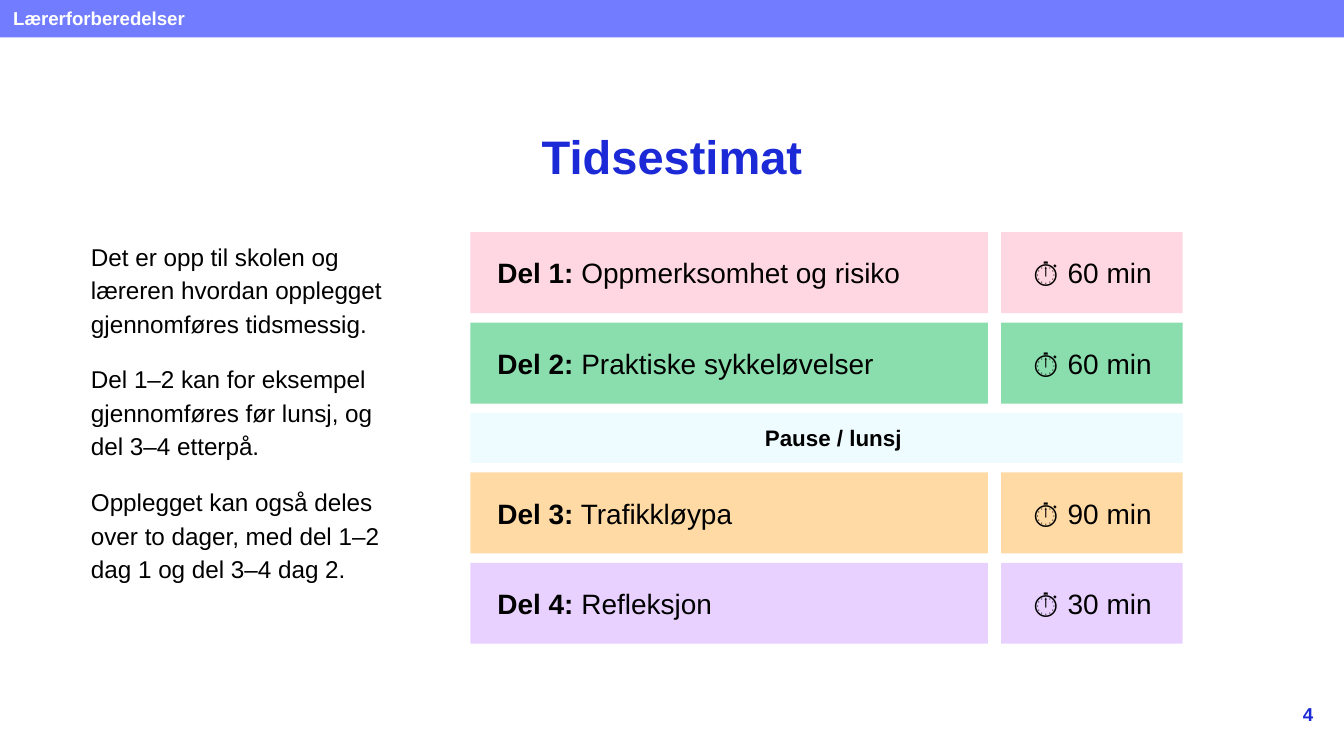
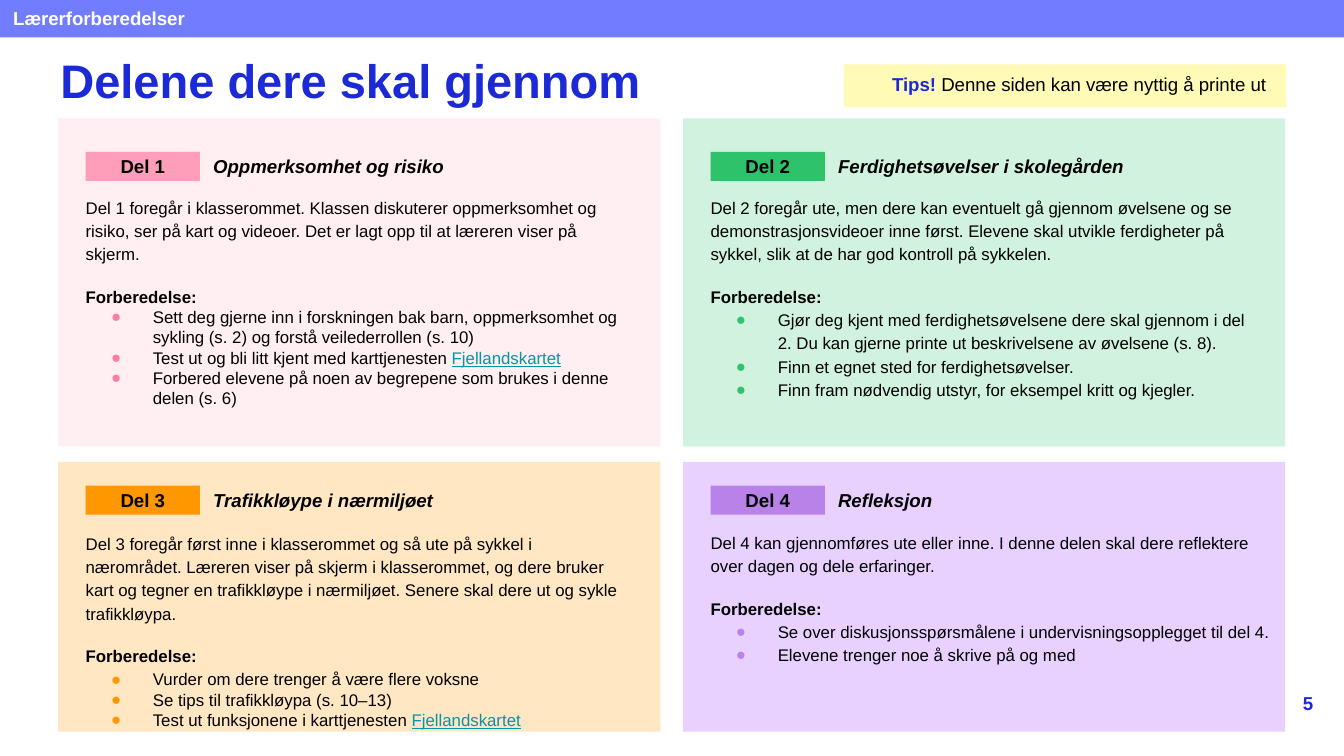
from dataclasses import dataclass, replace
from typing import Optional

from lxml import etree
from pptx import Presentation
from pptx import slide as sl
from pptx import util as u
from pptx.dml import color as dml
from pptx.enum import shapes, text
from pptx.oxml import ns

FONT = "Arial"
COL = {
    "black": "000000", "white": "FFFFFF", "blue": "1C29D6", "band": "727CFE",
    "link": "0097A7", "tip": "FFFAB5", "pause": "EEFBFF",
    "pink": "FFD7E2", "green": "8ADEAD", "peach": "FFDAA5", "lilac": "E9D1FF",
    "pink pale": "FFEEF2", "green pale": "D0F2DE", "peach pale": "FFE7C4",
    "pink tag": "FF9EBA", "green tag": "2EC26B", "orange": "FF9700", "violet": "B882E9",
    "pink dot": "FF7CA2", "green dot": "2EC36C",
}
LEFT, MID, RIGHT = text.PP_ALIGN.LEFT, text.PP_ALIGN.CENTER, text.PP_ALIGN.RIGHT
TOP, CENTRE = text.MSO_ANCHOR.TOP, text.MSO_ANCHOR.MIDDLE
PAD = 0.25
LOOSE = 1.15
WIDE, HIGH = 25.4, 14.29


@dataclass(frozen=True)
class Box:
    left: float
    top: float
    width: float
    height: float

    def dims(self) -> list[u.Length]:
        return [u.Cm(v) for v in (self.left, self.top, self.width, self.height)]


@dataclass(frozen=True)
class Run:
    words: str
    bold: bool = False
    italic: bool = False
    under: bool = False
    ink: str = "black"


@dataclass(frozen=True)
class Para:
    runs: tuple[Run, ...]
    lines: float = 1.0
    before: float = 0
    dot: str = ""


@dataclass(frozen=True)
class Look:
    size: float
    align: text.PP_ALIGN = LEFT
    anchor: text.MSO_ANCHOR = TOP
    left: float = PAD
    top: float = PAD


@dataclass(frozen=True)
class Part:
    name: str
    theme: str
    time: str
    fill: str


@dataclass(frozen=True)
class Card:
    name: str
    theme: str
    fill: str
    tag: str
    dot: str
    intro: str
    tasks: tuple[Para, ...]
    body: tuple[float, float, float]  # top, width, height


TITLE = Look(25.2)
LABEL = Look(10, MID, CENTRE)
HEAD = Look(10, LEFT, CENTRE)


def line(words: str, **kind) -> list[Para]:
    return [Para((Run(words, **kind),))]


def task(words: str, lines: float = 1.0, link: str = "") -> Para:
    runs = (Run(words),)
    if link:
        runs += (Run(link, under=True, ink="link"),)
    return Para(runs, lines)


def mark(para, ink: str) -> None:
    """Give a paragraph a coloured bullet and a hanging indent."""
    props = para._p.get_or_add_pPr()
    props.set("marL", str(u.Cm(1.27)))
    props.set("indent", str(u.Cm(-0.79)))
    tint = etree.SubElement(props, ns.qn("a:buClr"))
    etree.SubElement(tint, ns.qn("a:srgbClr"), val=COL[ink])
    etree.SubElement(props, ns.qn("a:buFont"), typeface=FONT)
    etree.SubElement(props, ns.qn("a:buChar"), char="●")


def write(shape, paras: list[Para], look: Look) -> None:
    frame = shape.text_frame
    form = {
        "word_wrap": True, "auto_size": text.MSO_AUTO_SIZE.NONE,
        "vertical_anchor": look.anchor,
        "margin_left": u.Cm(look.left), "margin_top": u.Cm(look.top),
        "margin_right": u.Cm(PAD), "margin_bottom": u.Cm(PAD),
    }
    for key, val in form.items():
        setattr(frame, key, val)
    for pos, item in enumerate(paras):
        para = frame.add_paragraph() if pos else frame.paragraphs[0]
        form = {"alignment": look.align, "line_spacing": item.lines,
                "space_before": u.Pt(item.before)}
        for key, val in form.items():
            setattr(para, key, val)
        if item.dot:
            mark(para, item.dot)
        for part in item.runs:
            run = para.add_run()
            run.text = part.words
            form = {"name": FONT, "size": u.Pt(look.size), "bold": part.bold,
                    "italic": part.italic, "underline": part.under}
            for key, val in form.items():
                setattr(run.font, key, val)
            run.font.color.rgb = dml.RGBColor.from_string(COL[part.ink])


def block(page: sl.Slide, box: Box, fill: str,
          paras: Optional[list[Para]] = None, look: Look = LABEL) -> None:
    shape = page.shapes.add_shape(shapes.MSO_SHAPE.RECTANGLE, *box.dims())
    shape.shadow.inherit = False
    shape.fill.solid()
    shape.fill.fore_color.rgb = dml.RGBColor.from_string(COL[fill])
    shape.line.fill.background()
    if paras:
        write(shape, paras, look)


def note(page: sl.Slide, box: Box, paras: list[Para], look: Look) -> None:
    write(page.shapes.add_textbox(*box.dims()), paras, look)


def start(deck, title: str, box: Box, align: text.PP_ALIGN,
          count: int, low: float) -> sl.Slide:
    """Add a slide with its title, top band and page number."""
    page = deck.slides.add_slide(deck.slide_layouts[5])
    head = page.shapes.title
    for key, val in zip(("left", "top", "width", "height"), box.dims()):
        setattr(head, key, val)
    write(head, line(title, bold=True, ink="blue"), replace(TITLE, align=align))
    block(page, Box(0, 0, WIDE, 0.71), "band",
          line("Lærerforberedelser", bold=True, ink="white"), Look(10, top=0.13))
    note(page, Box(23.55, low, 1.52, 1.09), line(str(count), bold=True, ink="blue"),
         Look(10, RIGHT, CENTRE))
    return page


# Time estimate
PARTS = [
    Part("Del 1:", "Oppmerksomhet og risiko", "60 min", "pink"),
    Part("Del 2:", "Praktiske sykkeløvelser", "60 min", "green"),
    None,  # the break
    Part("Del 3:", "Trafikkløypa", "90 min", "peach"),
    Part("Del 4:", "Refleksjon", "30 min", "lilac"),
]
ADVICE = [
    "Det er opp til skolen og læreren hvordan opplegget gjennomføres tidsmessig.",
    "Del 1–2 kan for eksempel gjennomføres før lunsj, og del 3–4 etterpå.",
    "Opplegget kan også deles over to dager, med del 1–2 dag 1 og del 3–4 dag 2.",
]


def times(deck) -> None:
    page = start(deck, "Tidsestimat", Box(0.86, 2.16, 23.68, 1.6), MID, 4, 12.95)
    note(page, Box(1.47, 4.24, 6.3, 10.04),
         [Para((Run(words),), LOOSE, 12 if pos else 0) for pos, words in enumerate(ADVICE)],
         Look(13))
    left, top, gap = 8.89, 4.39, 0.18
    for part in PARTS:
        tall = 1.53 if part else 0.94
        if part:
            words = Para((Run(part.name, bold=True), Run(" " + part.theme)))
            block(page, Box(left, top, 9.78, tall), part.fill, [words],
                  Look(15, LEFT, CENTRE, left=0.51))
            block(page, Box(18.92, top, 3.43, tall), part.fill,
                  line("⏱ " + part.time), Look(15, MID, CENTRE))
        else:
            block(page, Box(left, top, 13.46, tall), "pause",
                  line("Pause / lunsj", bold=True), Look(12, MID, CENTRE, left=0.51))
        top += tall + gap


# The four parts
MAP = "Fjellandskartet"
CARDS = [
    Card("Del 1", "Oppmerksomhet og risiko", "pink pale", "pink tag", "pink dot",
         "Del 1 foregår i klasserommet. Klassen diskuterer oppmerksomhet og risiko, "
         "ser på kart og videoer. Det er lagt opp til at læreren viser på skjerm.",
         (task("Sett deg gjerne inn i forskningen bak barn, oppmerksomhet og sykling "
               "(s. 2) og forstå veilederrollen (s. 10)"),
          task("Test ut og bli litt kjent med karttjenesten ", link=MAP),
          task("Forbered elevene på noen av begrepene som brukes i denne delen (s. 6)")),
         (3.43, 10.8, 4.57)),
    Card("Del 2", "Ferdighetsøvelser i skolegården", "green pale", "green tag", "green dot",
         "Del 2 foregår ute, men dere kan eventuelt gå gjennom øvelsene og se "
         "demonstrasjonsvideoer inne først. Elevene skal utvikle ferdigheter på sykkel, "
         "slik at de har god kontroll på sykkelen.",
         (task("Gjør deg kjent med ferdighetsøvelsene dere skal gjennom i del 2. "
               "Du kan gjerne printe ut beskrivelsene av øvelsene (s. 8).", LOOSE),
          task("Finn et egnet sted for ferdighetsøvelser.", LOOSE),
          task("Finn fram nødvendig utstyr, for eksempel kritt og kjegler.", LOOSE)),
         (3.43, 10.8, 4.42)),
    Card("Del 3", "Trafikkløype i nærmiljøet", "peach pale", "orange", "orange",
         "Del 3 foregår først inne i klasserommet og så ute på sykkel i nærområdet. "
         "Læreren viser på skjerm i klasserommet, og dere bruker kart og tegner en "
         "trafikkløype i nærmiljøet. Senere skal dere ut og sykle trafikkløypa.",
         (task("Vurder om dere trenger å være flere voksne", LOOSE),
          task("Se tips til trafikkløypa (s. 10–13)"),
          task("Test ut funksjonene i karttjenesten ", link=MAP)),
         (9.78, 10.75, 4.32)),
    Card("Del 4", "Refleksjon", "lilac", "violet", "violet",
         "Del 4 kan gjennomføres ute eller inne. I denne delen skal dere reflektere "
         "over dagen og dele erfaringer.",
         (task("Se over diskusjonsspørsmålene i undervisningsopplegget til del 4.", LOOSE),
          task("Elevene trenger noe å skrive på og med", LOOSE)),
         (9.76, 11.13, 3.1)),
]
COLS = (1.1, 12.91)
ROWS = ((2.24, 6.2, 2.87), (8.73, 5.1, 9.18))  # card top, card height, tag top


def cards(deck) -> None:
    page = start(deck, "Delene dere skal gjennom", Box(0.89, 0.72, 12.01, 1.6),
                 LEFT, 5, 12.75)
    block(page, Box(15.95, 1.22, 8.36, 0.81), "tip")
    tip = Para((Run("Tips! ", bold=True, ink="blue"),
                Run("Denne siden kan være nyttig å printe ut")))
    note(page, Box(16.61, 1.12, 7.7, 0.71), [tip], Look(10))
    for pos, card in enumerate(CARDS):
        left = COLS[pos % 2]
        top, tall, high = ROWS[pos // 2]
        block(page, Box(left, top, 11.38, tall), card.fill)
        block(page, Box(left + 0.52, high, 2.16, 0.55), card.tag, line(card.name, bold=True))
        note(page, Box(left + 2.68, high, 6.4, 0.55),
             line(card.theme, bold=True, italic=True), HEAD)
        paras = [Para((Run(card.intro),), LOOSE),
                 Para((Run("Forberedelse:", bold=True),), before=12)]
        paras += [replace(item, dot=card.dot) for item in card.tasks]
        low, wide, deep = card.body
        note(page, Box(left + 0.27, low, wide, deep), paras, Look(9))


def main() -> None:
    deck = Presentation()
    deck.slide_width, deck.slide_height = u.Cm(WIDE), u.Cm(HIGH)
    times(deck)
    cards(deck)
    deck.save("out.pptx")


if __name__ == "__main__":
    main()
